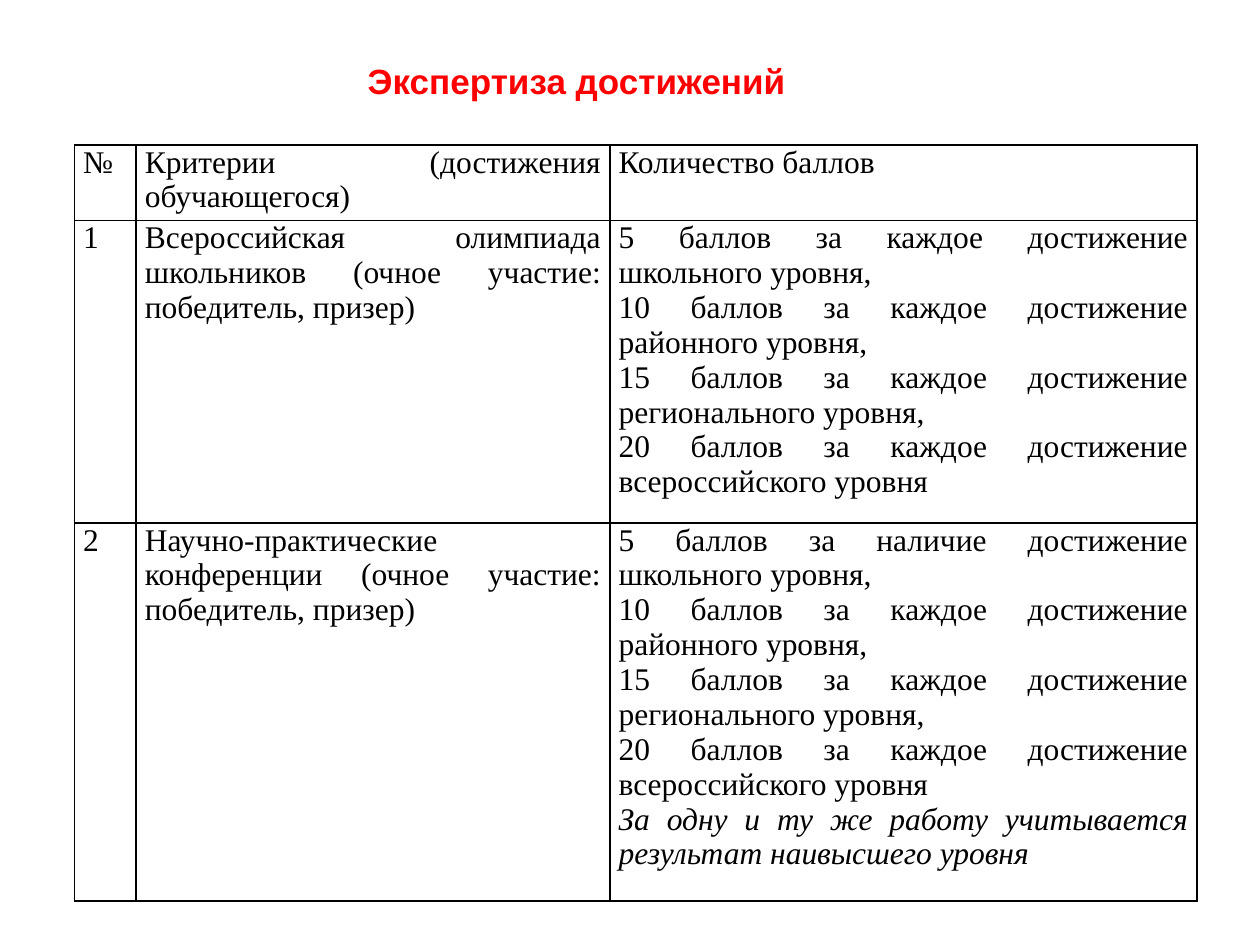
from lxml import etree
from pptx import Presentation
from pptx.dml.color import RGBColor
from pptx.enum import text
from pptx.oxml import ns
from pptx.util import Inches, Pt


def rgb(color):
    return RGBColor.from_string(color)


def write(frame, *lines, font="Times New Roman", size=18, color="000000",
          bold=False, align=text.PP_ALIGN.JUSTIFY, last=False):
    frame.word_wrap = True
    for i, line in enumerate(lines):
        para = frame.paragraphs[0] if i == 0 else frame.add_paragraph()
        para.alignment = align
        run = para.add_run()
        run.text = line
        run.font.name = font
        run.font.size = Pt(size)
        run.font.bold = bold
        run.font.italic = last and i == len(lines) - 1
        run.font.color.rgb = rgb(color)


deck = Presentation()
deck.slide_width, deck.slide_height = Inches(10), Inches(7.5)
slide = deck.slides.add_slide(deck.slide_layouts[6])

title = slide.shapes.add_textbox(Inches(2.82), Inches(0.42), Inches(4.34), Inches(0.44))
title.fill.solid()
title.fill.fore_color.rgb = rgb("FFFFFF")
title.text_frame.vertical_anchor = text.MSO_ANCHOR.MIDDLE
write(title.text_frame, "Экспертиза достижений", font="Arial", size=20,
      color="FF0000", bold=True, align=text.PP_ALIGN.LEFT)

levels = [
    "10 баллов за каждое достижение районного уровня,",
    "15 баллов за каждое достижение регионального уровня,",
    "20 баллов за каждое достижение всероссийского уровня",
]
rows = [
    (["№"], ["Критерии (достижения обучающегося)"], ["Количество баллов"]),
    (["1"],
     ["Всероссийская олимпиада школьников (очное участие: победитель, призер)"],
     ["5 баллов за каждое достижение школьного уровня,", *levels]),
    (["2"],
     ["Научно-практические конференции (очное участие: победитель, призер)"],
     ["5 баллов за наличие достижение школьного уровня,", *levels,
      "За одну и ту же работу учитывается результат наивысшего уровня"]),
]
widths = [0.49, 3.76, 4.66]
heights = [0.6, 2.4, 3]

table = slide.shapes.add_table(len(rows), len(widths), Inches(0.59), Inches(1.15),
                               Inches(sum(widths)), Inches(sum(heights))).table
table.first_row = table.horz_banding = False
for col, width in zip(table.columns, widths):
    col.width = Inches(width)
for row, height in zip(table.rows, heights):
    row.height = Inches(height)

for r, row in enumerate(rows):
    for c, lines in enumerate(row):
        cell = table.cell(r, c)
        cell.margin_left = cell.margin_right = Inches(0.07)
        cell.margin_top = cell.margin_bottom = 0
        write(cell.text_frame, *lines, last=len(lines) > 4)
        props = cell._tc.get_or_add_tcPr()
        for side in ("lnL", "lnR", "lnT", "lnB"):
            edge = etree.SubElement(props, ns.qn("a:" + side), w=str(Pt(1)))
            fill = etree.SubElement(edge, ns.qn("a:solidFill"))
            etree.SubElement(fill, ns.qn("a:srgbClr"), val="000000")
        cell.fill.background()

deck.save("out.pptx")
